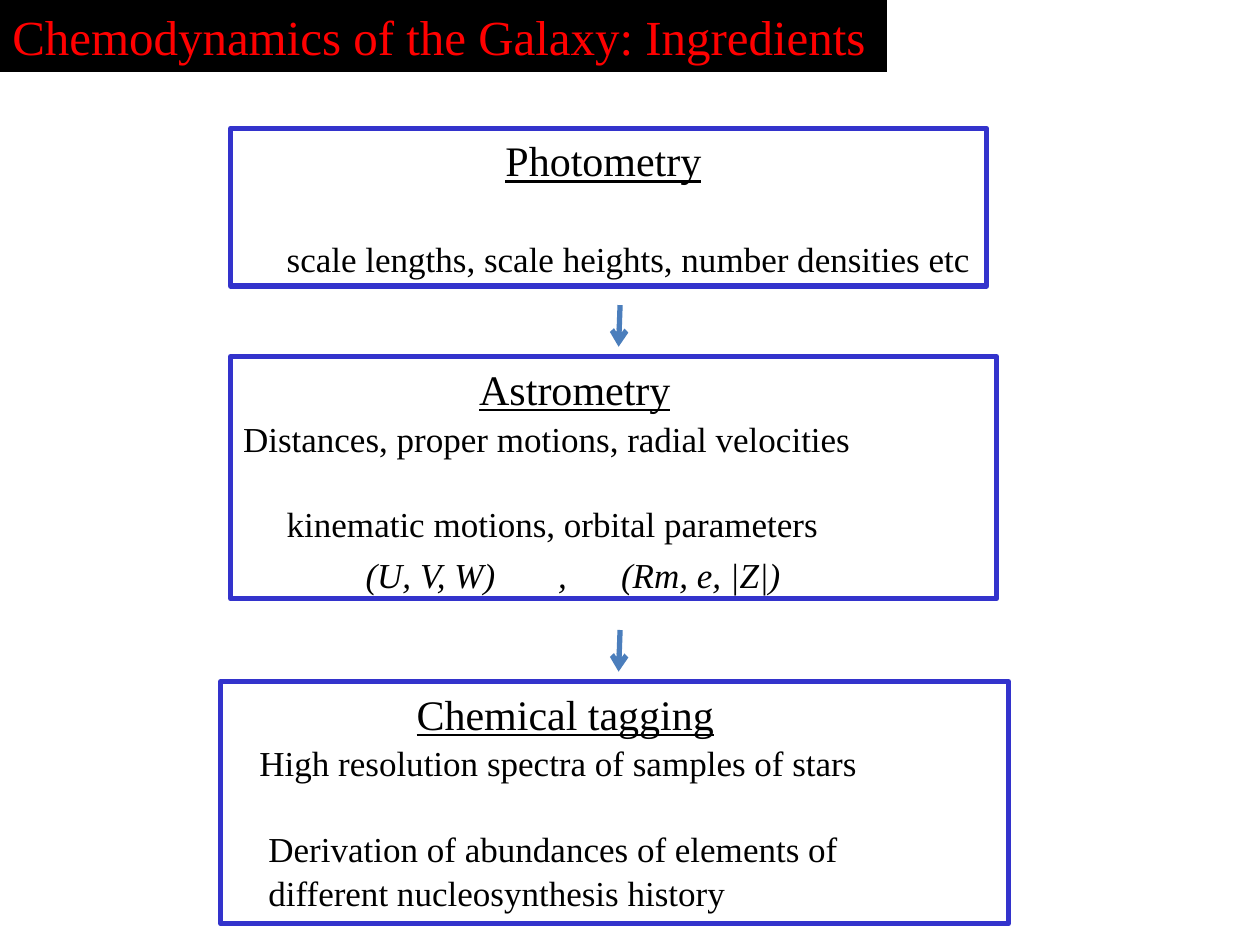
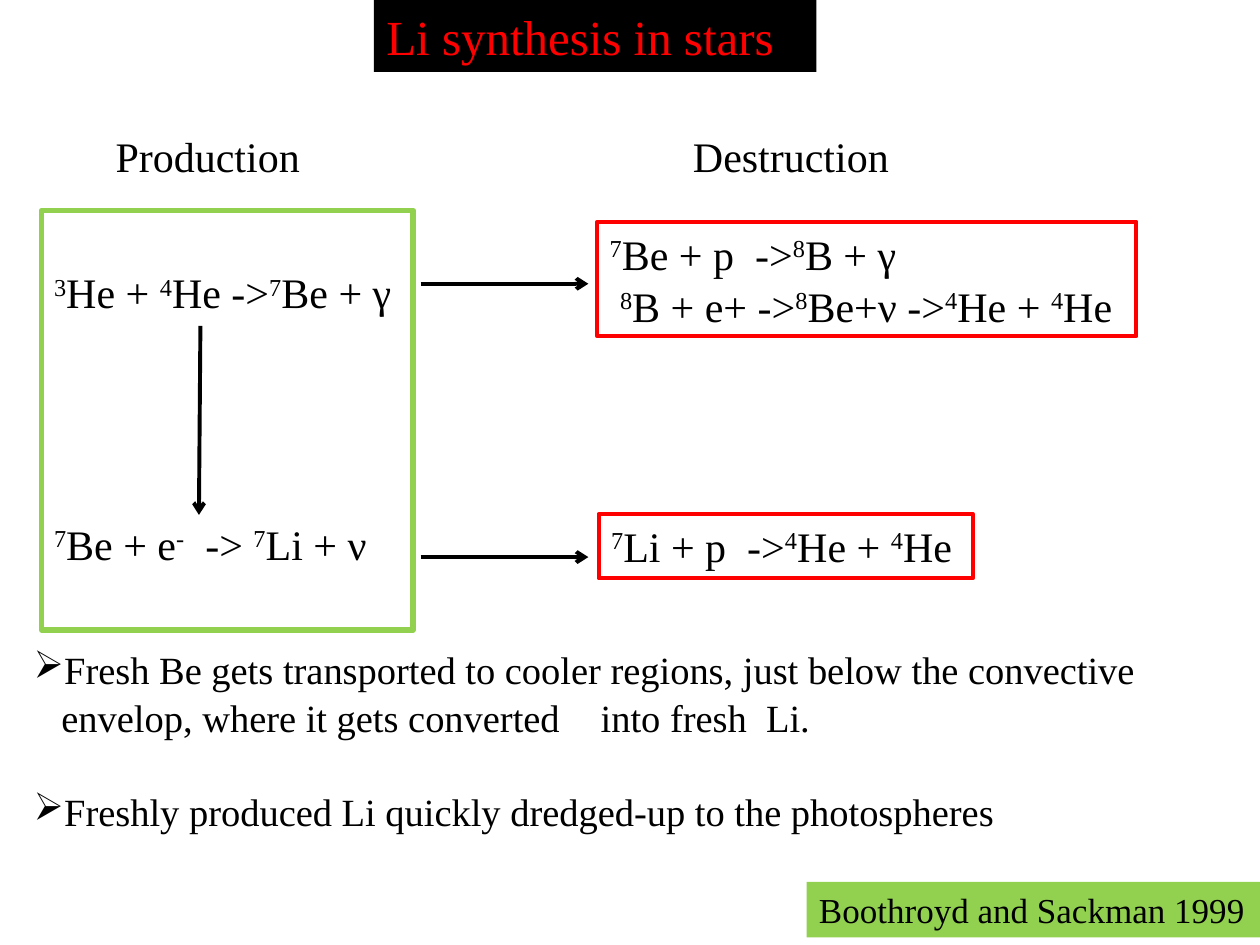
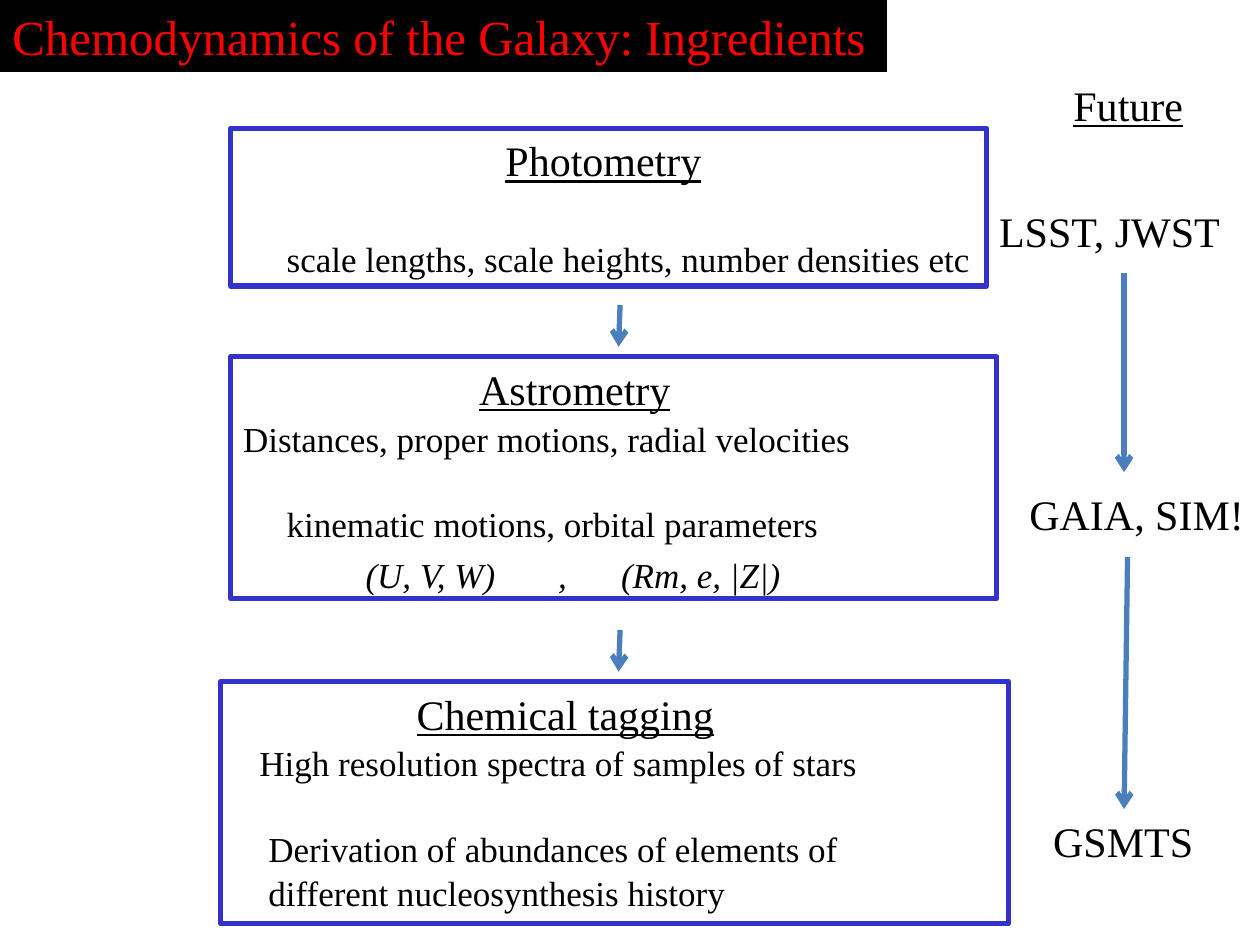
"""Build three slides on Galactic chemodynamics and lithium synthesis in stars."""
import collections

import lxml.etree
import pptx
import pptx.dml.color
import pptx.enum.shapes
import pptx.enum.text
import pptx.oxml.ns
import pptx.util

Cm, Pt = pptx.util.Cm, pptx.util.Pt
qn = pptx.oxml.ns.qn

COLORS = {
    "black": "000000",
    "red": "FF0000",
    "frame": "3333CC",
    "arrow": "4B7EBC",
    "green": "92D050",
}

Line = collections.namedtuple(
    "Line",
    "text size indent gap underline italic bullet tabs",
    defaults=(24, 0, 1, None, None, None, ()),
)


class Deck:
    """Hold the shared style and the current slide."""

    font = "Times New Roman"

    def __init__(self):
        """Start an empty 10 by 7.5 inch presentation."""
        self.presentation = pptx.Presentation()
        self.presentation.slide_width = Cm(25.4)
        self.presentation.slide_height = Cm(19.05)
        self.slide = None

    def color(self, name):
        """Return the named colour."""
        return pptx.dml.color.RGBColor.from_string(COLORS[name])

    def new_slide(self):
        """Add a blank slide and make it current."""
        layout = self.presentation.slide_layouts[6]
        self.slide = self.presentation.slides.add_slide(layout)

    def set_lines(self, frame, lines, color="black"):
        """Fill a text frame with left-aligned lines, with ^ around superscripts."""
        frame.word_wrap = True
        frame.auto_size = pptx.enum.text.MSO_AUTO_SIZE.NONE
        frame.vertical_anchor = pptx.enum.text.MSO_ANCHOR.TOP
        for number, line in enumerate(lines):
            paragraph = frame.add_paragraph() if number else frame.paragraphs[0]
            paragraph.alignment = pptx.enum.text.PP_ALIGN.LEFT
            if number:
                paragraph.space_before = Pt(line.gap)
            self.indent(paragraph, line)
            paragraph.font.name = self.font
            paragraph.font.size = Pt(line.size)
            paragraph.font.color.rgb = self.color(color)
            paragraph.font.underline = line.underline
            paragraph.font.italic = line.italic
            for position, part in enumerate(line.text.split("^")):
                if part:
                    run = paragraph.add_run()
                    run.text = part
                    if position % 2:
                        run.font._element.set("baseline", "30000")

    def indent(self, paragraph, line):
        """Set the first-line indent, bullet and tab stops of a paragraph."""
        properties = paragraph._p.get_or_add_pPr()
        hanging = Cm(0.6) if line.bullet else 0
        properties.set("marL", str(hanging))
        properties.set("indent", str(Cm(line.indent) - hanging))
        if line.bullet:
            lxml.etree.SubElement(properties, qn("a:buChar"), char=line.bullet)
        if line.tabs:
            stops = lxml.etree.SubElement(properties, qn("a:tabLst"))
            for stop in line.tabs:
                lxml.etree.SubElement(stops, qn("a:tab"), pos=str(Cm(stop)), algn="l")

    def box(self, place, lines, fill=None, border=None, width=3, color="black", top=0.13):
        """Draw a rectangle with text."""
        rectangle = self.slide.shapes.add_shape(
            pptx.enum.shapes.MSO_SHAPE.RECTANGLE, *map(Cm, place))
        rectangle.shadow.inherit = False
        if fill:
            rectangle.fill.solid()
            rectangle.fill.fore_color.rgb = self.color(fill)
        else:
            rectangle.fill.background()
        if border:
            rectangle.line.color.rgb = self.color(border)
            rectangle.line.width = Pt(width)
        else:
            rectangle.line.fill.background()
        rectangle.text_frame.margin_top = Cm(top)
        self.set_lines(rectangle.text_frame, lines, color)

    def title(self, left, width, text):
        """Draw the black title band."""
        self.box((left, 0, width, 1.45), [Line(text, 28)], fill="black", color="red")

    def text(self, place, *lines):
        """Place free text."""
        label = self.slide.shapes.add_textbox(*map(Cm, place))
        self.set_lines(label.text_frame, lines)

    def arrow(self, start, end, color="arrow", width=3):
        """Draw a straight arrow."""
        connector = self.slide.shapes.add_connector(
            pptx.enum.shapes.MSO_CONNECTOR.STRAIGHT, *map(Cm, start + end))
        connector.line.color.rgb = self.color(color)
        connector.line.width = Pt(width)
        lxml.etree.SubElement(connector.line._get_or_add_ln(), qn("a:tailEnd"), type="arrow")
        lxml.etree.SubElement(connector._element.spPr, qn("a:effectLst"))


def ingredients(deck):
    """Add a slide with the three ingredients of chemodynamics."""
    deck.new_slide()
    deck.title(0, 17.88, "Chemodynamics of the Galaxy: Ingredients")
    deck.box((4.65, 7.19, 15.44, 4.88), [
        Line("Astrometry", indent=4.76, underline=True),
        Line("Distances, proper motions, radial velocities", 20, gap=2),
        Line("kinematic motions, orbital parameters", 20, 0.88, 25),
        Line("(U, V, W)\t,\t(Rm, e, |Z|)", 20, 2.47, 5, italic=True, tabs=(5.62, 6.51)),
    ], border="frame")
    deck.box((4.45, 13.74, 15.88, 4.88), [
        Line("Chemical tagging", indent=3.7, underline=True),
        Line("High resolution spectra of samples of stars", 20, 0.53, 2),
        Line("Derivation of abundances of elements of", 20, 0.71, 25),
        Line("different nucleosynthesis history", 20, 0.71),
    ], border="frame")
    deck.box((4.65, 2.59, 15.24, 3.18), [
        Line("Photometry", indent=5.29, underline=True),
        Line("scale lengths, scale heights, number densities etc", 20, 0.88, 30),
    ], border="frame")
    for top in (6.15, 12.7):
        deck.arrow((12.5, top), (12.47, top + 0.84))


def lithium(deck):
    """Add the slide on lithium production and destruction."""
    deck.new_slide()
    deck.box((0.84, 4.24, 7.49, 8.46), [
        Line("^3^He + ^4^He ->^7^Be + γ"),
        Line("^7^Be + e^-^  -> ^7^Li + ν", gap=115),
    ], border="green", top=1.14)
    deck.box((12.07, 10.36, 7.54, 1.3), [
        Line("^7^Li + p  ->^4^He + ^4^He"),
    ], border="red", width=2.25)
    deck.box((12.04, 4.47, 10.87, 2.31), [
        Line("^7^Be + p  ->^8^B + γ"),
        Line("^8^B + e+ ->^8^Be+ν ->^4^He + ^4^He", indent=0.21),
    ], border="red", width=2.25)
    deck.arrow((4.04, 6.57), (4.01, 10.38), "black", 2.25)
    for height in (5.72, 11.23):
        deck.arrow((8.48, height), (11.86, height), "black", 2.25)
    deck.text((2.08, 2.51, 4.27, 1.3), Line("Production"))
    deck.text((13.72, 2.51, 4.5, 1.3), Line("Destruction"))
    deck.title(7.54, 8.92, "Li synthesis in stars")
    deck.text(
        (0.43, 12.9, 22.96, 4.01),
        Line("Fresh Be gets transported to cooler regions, just below the convective",
             22, bullet="➢"),
        Line("envelop, where it gets converted\tinto fresh  Li.", 22, 0.56, tabs=(11.2,)),
        Line("Freshly produced Li quickly dredged-up to the photospheres",
             22, gap=27.3, bullet="➢"),
    )
    deck.box((16.26, 17.78, 9.14, 1.12), [Line("Boothroyd and Sackman 1999", 20)], fill="green")


def future(deck):
    """Add the ingredients slide with the facilities to come."""
    ingredients(deck)
    deck.text((21.39, 1.47, 2.84, 1.27), Line("Future", underline=True))
    for left, top, width, facilities in (
        (19.89, 4.01, 5.05, "LSST, JWST"),
        (20.5, 9.73, 4.9, "GAIA, SIM!"),
        (20.98, 16.31, 3.38, "GSMTS"),
    ):
        deck.text((left, top, width, 1.27), Line(facilities))
    deck.arrow((22.73, 11.23), (22.66, 16.31))
    deck.arrow((22.66, 5.51), (22.66, 9.52))


def main():
    """Build and save the presentation."""
    deck = Deck()
    ingredients(deck)
    lithium(deck)
    future(deck)
    deck.presentation.save("out.pptx")


if __name__ == "__main__":
    main()
